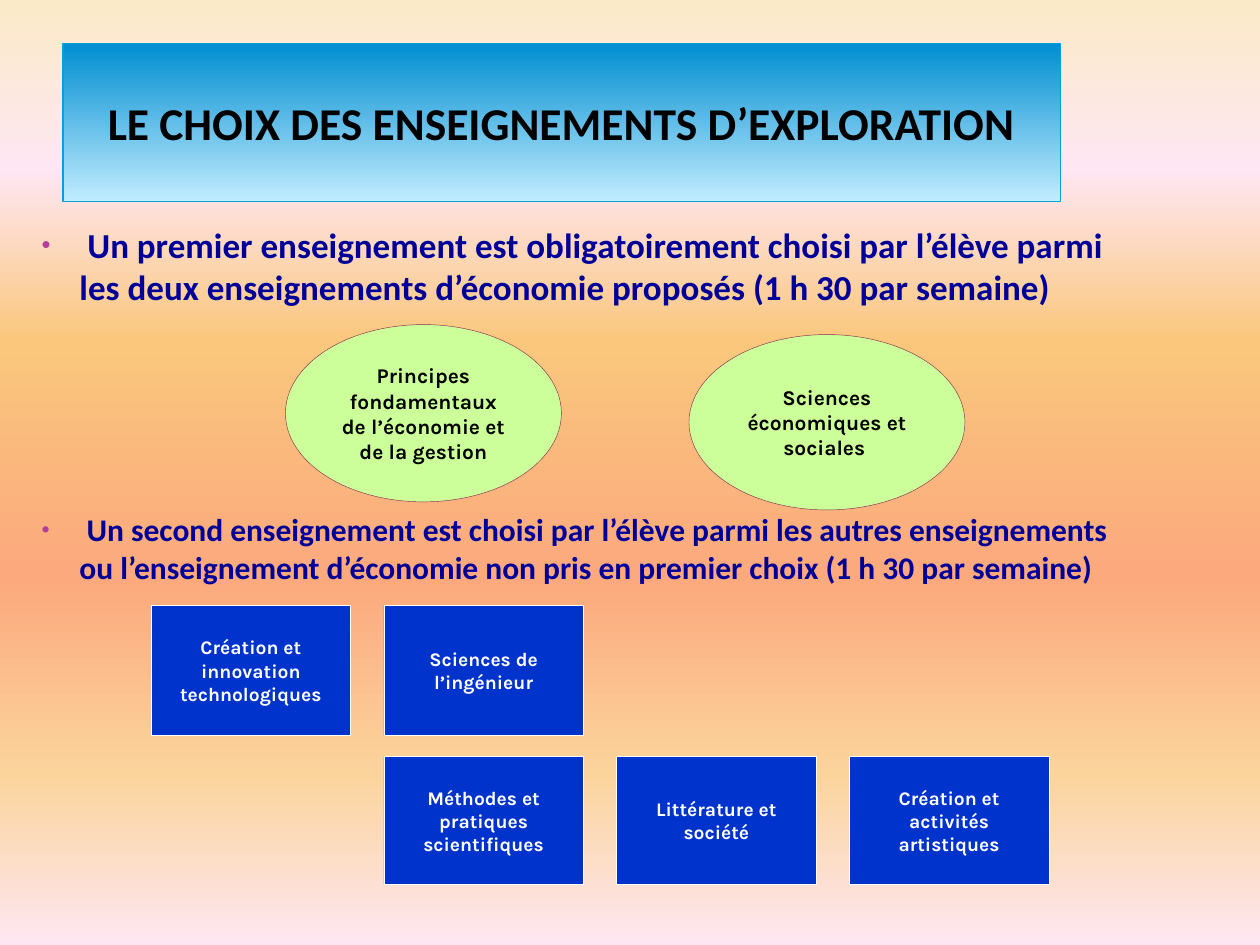
from dataclasses import dataclass

import pptx
import pptx.dml.color
import pptx.enum.shapes
import pptx.enum.text
import pptx.oxml.ns
import pptx.oxml.xmlchemy
import pptx.util

Pt = pptx.util.Pt
RGBColor = pptx.dml.color.RGBColor
Shape = pptx.enum.shapes.MSO_SHAPE
Align = pptx.enum.text.PP_ALIGN
Anchor = pptx.enum.text.MSO_ANCHOR
OxmlElement = pptx.oxml.xmlchemy.OxmlElement
qn = pptx.oxml.ns.qn

BLACK = RGBColor(0x00, 0x00, 0x00)
WHITE = RGBColor(0xFF, 0xFF, 0xFF)
NAVY = RGBColor(0x00, 0x00, 0x99)
BLUE = RGBColor(0x00, 0x33, 0xCC)
LIME = RGBColor(0xCC, 0xFF, 0x99)
WINE = RGBColor(0x88, 0x2D, 0x4D)
CYAN = RGBColor(0x02, 0xA3, 0xDC)
PURPLE = RGBColor(0xB1, 0x3F, 0x9A)
SUNSET = [
    (0, RGBColor(0xFB, 0xEA, 0xC7)), (18, RGBColor(0xFE, 0xE7, 0xF2)),
    (36, RGBColor(0xFA, 0xC7, 0x7D)), (61, RGBColor(0xFB, 0xA9, 0x7D)),
    (82, RGBColor(0xFB, 0xD4, 0x9C)), (100, RGBColor(0xFE, 0xE7, 0xF2)),
]
SKY = [(0, RGBColor(0x00, 0x8E, 0xD1)), (100, RGBColor(0xC1, 0xEC, 0xFF))]


@dataclass
class Style:
    shape: Shape
    fill: RGBColor
    line: RGBColor
    ink: RGBColor
    size: float


@dataclass
class Course:
    text: str
    left: float
    top: float
    width: float
    height: float


ECONOMICS = Style(Shape.OVAL, LIME, WINE, BLACK, 12)
EXPLORATION = Style(Shape.RECTANGLE, BLUE, WHITE, WHITE, 11)


def write(paragraph, text: str, *, size: float, color: RGBColor,
          font: str = "Karla", align=Align.CENTER, before: float = 0) -> None:
    paragraph.alignment = align
    paragraph.space_before = Pt(before)
    run = paragraph.add_run()
    run.text = text
    run.font.name = font
    run.font.size = Pt(size)
    run.font.bold = True
    run.font.color.rgb = color


def place(shape, left: float, top: float, width: float, height: float) -> None:
    shape.left, shape.top = Pt(left), Pt(top)
    shape.width, shape.height = Pt(width), Pt(height)


def color_element(color: RGBColor):
    element = OxmlElement("a:srgbClr")
    element.set("val", str(color))
    return element


def paint_gradient(fill, owner, stops: list) -> None:
    """Fill from top to bottom with any number of colour stops."""
    fill.gradient()
    fill.gradient_angle = 270
    stop_list = owner.find(".//" + qn("a:gsLst"))
    for old in list(stop_list):
        stop_list.remove(old)
    for percent, color in stops:
        stop = OxmlElement("a:gs")
        stop.set("pos", str(percent * 1000))
        stop.append(color_element(color))
        stop_list.append(stop)


def add_bullet(paragraph) -> None:
    properties = paragraph._p.get_or_add_pPr()
    properties.set("marL", str(int(Pt(21.6))))
    properties.set("indent", str(-int(Pt(21.6))))
    bullet_color = OxmlElement("a:buClr")
    bullet_color.append(color_element(PURPLE))
    properties.append(bullet_color)
    for tag, key, value in (("a:buSzPct", "val", "73000"),
                            ("a:buFont", "typeface", "Arial"),
                            ("a:buChar", "char", "•")):
        element = OxmlElement(tag)
        element.set(key, value)
        properties.append(element)


def draw_course(shapes, course: Course, style: Style) -> None:
    shape = shapes.add_shape(style.shape, Pt(course.left), Pt(course.top),
                             Pt(course.width), Pt(course.height))
    shape.shadow.inherit = False
    shape.fill.solid()
    shape.fill.fore_color.rgb = style.fill
    shape.line.color.rgb = style.line
    shape.line.width = Pt(0.25)
    frame = shape.text_frame
    frame.word_wrap = True
    frame.vertical_anchor = Anchor.MIDDLE
    write(frame.paragraphs[0], course.text, size=style.size, color=style.ink)


def main() -> None:
    deck = pptx.Presentation()
    deck.slide_width, deck.slide_height = Pt(720), Pt(540)
    slide = deck.slides.add_slide(deck.slide_layouts[1])
    paint_gradient(slide.background.fill, slide._element, SUNSET)

    # Title banner
    title = slide.shapes.title
    place(title, 36, 25, 570, 90)
    paint_gradient(title.fill, title._element, SKY)
    title.line.color.rgb = CYAN
    title.line.width = Pt(0.75)
    heading = title.text_frame
    heading.auto_size = pptx.enum.text.MSO_AUTO_SIZE.NONE
    heading.vertical_anchor = Anchor.MIDDLE
    heading.margin_left = heading.margin_right = Pt(3.6)
    heading.margin_top = heading.margin_bottom = 0
    write(heading.paragraphs[0], "LE CHOIX DES ENSEIGNEMENTS D’EXPLORATION",
          size=26, color=BLACK, font="Calibri")

    # The two rules, with room for the ellipses between them
    rules = slide.placeholders[1]
    place(rules, 16.6, 124, 644.4, 397.4)
    body = rules.text_frame
    body.auto_size = pptx.enum.text.MSO_AUTO_SIZE.NONE
    first, second = body.paragraphs[0], body.add_paragraph()
    for paragraph in (first, second):
        add_bullet(paragraph)
    write(first, " Un premier enseignement est obligatoirement choisi par l’élève "
          "parmi les deux enseignements d’économie proposés (1 h 30 par semaine)",
          size=20, color=NAVY, font="Calibri", align=Align.LEFT)
    write(second, " Un second enseignement est choisi par l’élève parmi les autres "
          "enseignements ou l’enseignement d’économie non pris en premier choix "
          "(1 h 30 par semaine)",
          size=18, color=NAVY, font="Calibri", align=Align.LEFT, before=116)

    # Economics courses
    for course in (
        Course("Sciences économiques et sociales ", 393.7, 191.2, 157.7, 100.2),
        Course("Principes fondamentaux de l’économie et de la gestion",
               163.1, 185.5, 157.7, 101.3),
    ):
        draw_course(slide.shapes, course, ECONOMICS)

    # Other courses on a grid: text, column, row
    grid = slide.shapes.add_group_shape()
    rows = [(345.9, 74.3), (432.3, 73)]
    for text, column, row in (
        ("Création et innovation technologiques", 0, 0),
        ("Sciences de l’ingénieur", 1, 0),
        ("Méthodes et pratiques scientifiques", 1, 1),
        ("Littérature et société", 2, 1),
        ("Création et activités artistiques", 3, 1),
    ):
        top, height = rows[row]
        draw_course(grid.shapes, Course(text, 86.4 + 133 * column, top, 114, height),
                    EXPLORATION)

    deck.save("out.pptx")


if __name__ == "__main__":
    main()
